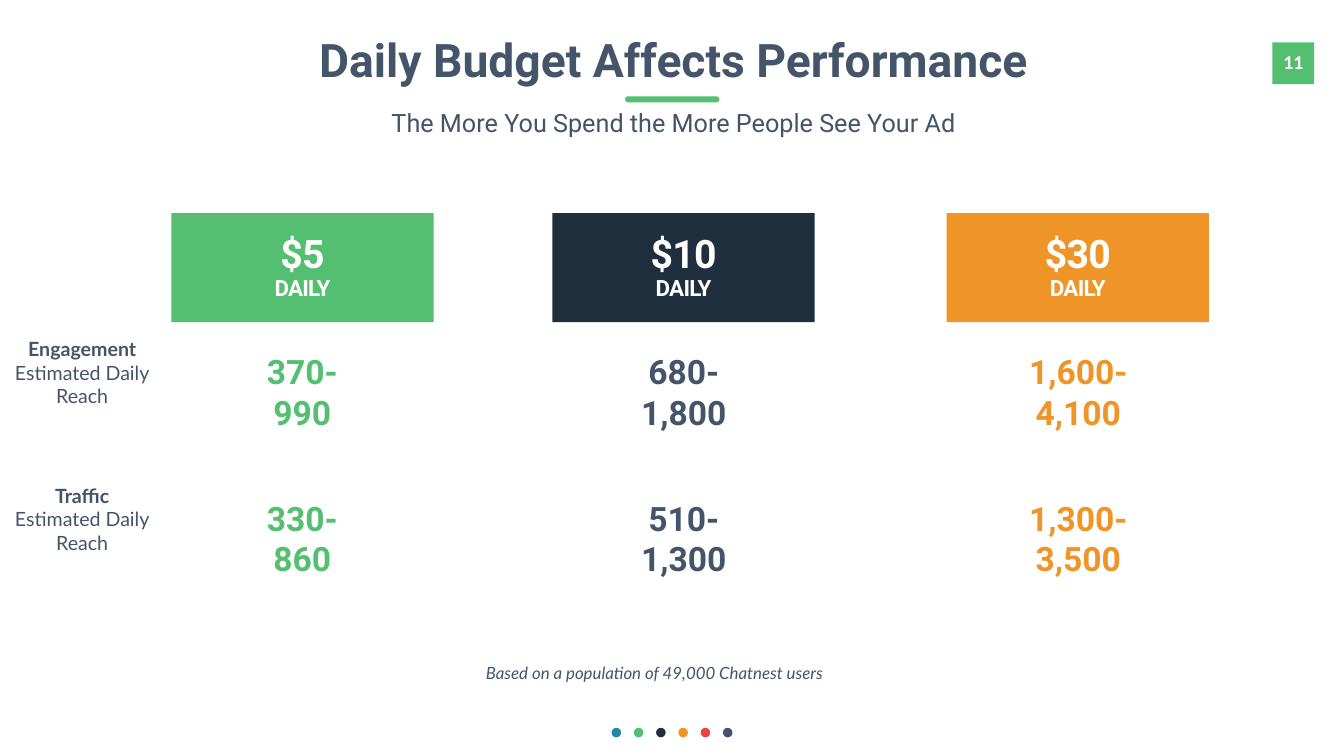
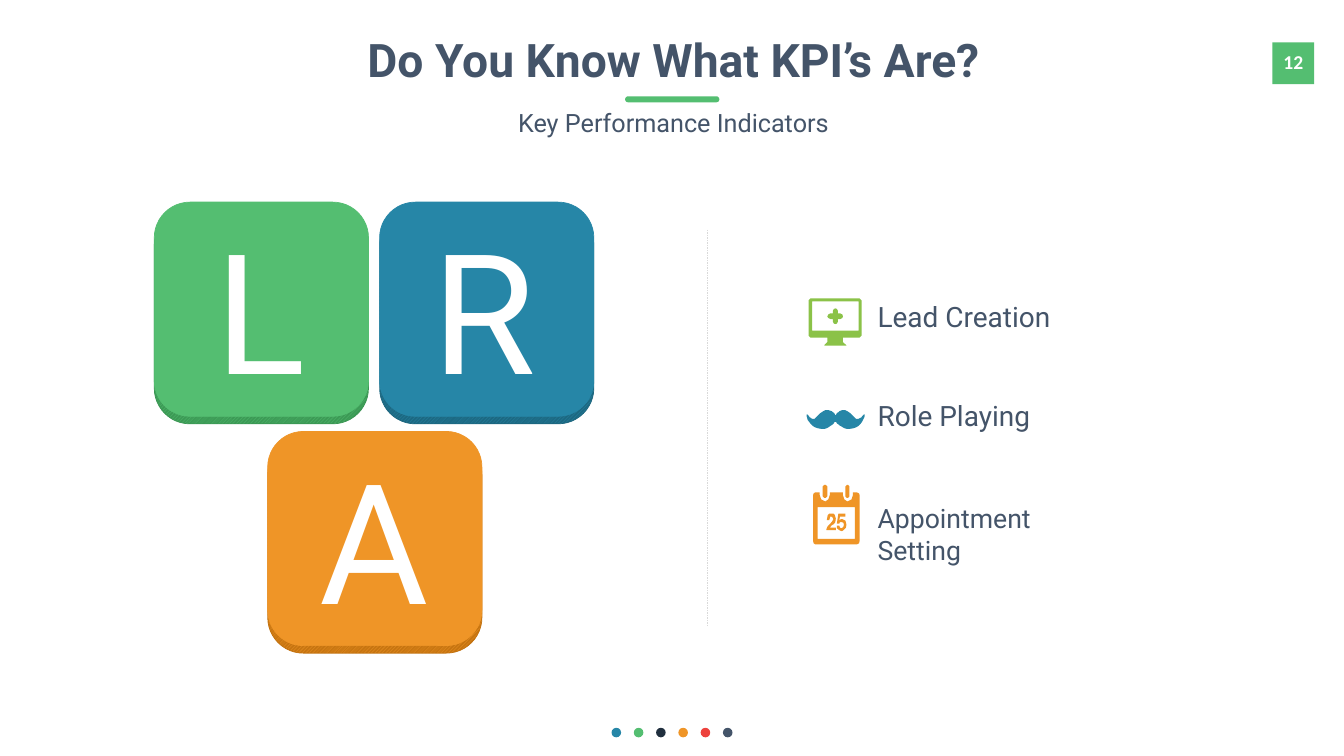
import pptx
import pptx.util
import pptx.dml.color
import pptx.enum.dml
import pptx.enum.shapes
import pptx.enum.text
import pptx.oxml.ns
import lxml.etree

# Shared style: 100 px to the inch
EMU_PER_PX = 9144
SLIDE_SIZE = (2666, 1500)
CENTER = 1336
GREEN, BLUE, NAVY, ORANGE = "54BE71", "2686A7", "202F3E", "EF9527"
RED, SLATE, WHITE, GRAY, LIME = "ED423D", "445469", "FFFFFF", "D9D9D9", "8BC248"
DOT_COLORS = [BLUE, GREEN, NAVY, ORANGE, RED, SLATE]
SHAPE = pptx.enum.shapes.MSO_SHAPE
ALIGN = pptx.enum.text.PP_ALIGN
ANCHOR = pptx.enum.text.MSO_ANCHOR

TITLE = dict(name="Roboto", size=66, bold=True, color=SLATE)
SUBTITLE = dict(name="Roboto", size=36, bold=False, color=SLATE)
PAGE = dict(name="Calibri", size=28, bold=True, color=WHITE)
PRICE = dict(name="Roboto", size=56, bold=True, color=WHITE, spacing=-110)
PERIOD = dict(PRICE, size=32)
VALUE = dict(name="Roboto", size=48, bold=True)
LABEL = dict(name="Lato", size=28, bold=False, color=SLATE)
NOTE = dict(name="Lato", size=24, italic=True, color=SLATE)
ITEM = dict(name="Roboto", color=SLATE)
LETTER = dict(name="Roboto", size=239, color=WHITE)

# Slide content
BUDGET = dict(page="11", title="Daily Budget Affects Performance", title_width=1514,
              subtitle="The More You Spend the More People See Your Ad",
              subtitle_width=1171)
# price, card left, card colour, value left, value width, value colour, values by row
PLANS = [
    ("$5", 340, GREEN, 466, 267, GREEN, ["370-990", "330-860"]),
    ("$10", 1096, NAVY, 1195, 323, SLATE, ["680-1,800", "510-1,300"]),
    ("$30", 1878, ORANGE, 1949, 380, ORANGE, ["1,600-4,100", "1,300-3,500"]),
]
GOALS = ["Engagement", "Traffic"]
FOOTNOTE = "Based on a population of 49,000 Chatnest users"

KPI = dict(page="12", title="Do You Know What KPI’s Are?", title_width=1352,
           subtitle="Key Performance Indicators", subtitle_width=643)
# letter, letter left and width, tile left and top, face and edge colours
TILES = [
    ("L", 417, 196, 306, 401, GREEN, "399552"),
    ("R", 830, 262, 753, 401, BLUE, "1C657D"),
    ("A", 619, 245, 531, 856, ORANGE, "C2710E"),
]
# text, top, width, size
ITEMS = [("Lead Creation", 590, 373, 40), ("Role Playing", 786, 335, 40),
         ("Appointment Setting", 991, 500, 38)]


def box_points(left, top, right, bottom, cut=0):
    """Corners of a rectangle, each cut off by the given length."""
    return [(left + cut, top), (right - cut, top), (right, top + cut),
            (right, bottom - cut), (right - cut, bottom), (left + cut, bottom),
            (left, bottom - cut), (left, top + cut)]


def curve_points(start, curves, steps=10):
    """Points along a chain of cubic curves."""
    points = [start]
    for x1, y1, x2, y2, x3, y3 in curves:
        x0, y0 = points[-1]
        for step in range(1, steps + 1):
            t = step / steps
            weights = ((1 - t) ** 3, 3 * t * (1 - t) ** 2, 3 * t * t * (1 - t), t ** 3)
            points.append(tuple(sum(w * v for w, v in zip(weights, values))
                                for values in ((x0, x1, x2, x3), (y0, y1, y2, y3))))
    return points


# Icon outlines, one list of points per contour
MONITOR = [
    box_points(1604, 592, 1709, 670, 4),
    box_points(1611, 598, 1703, 656),
    [(1641, 670), (1672, 670), (1672, 679), (1679, 685), (1679, 686),
     (1635, 686), (1635, 685), (1641, 679)],
    [(1647, 622), (1652, 622), (1652, 617), (1654, 613), (1657, 612), (1660, 613),
     (1662, 617), (1662, 622), (1667, 622), (1671, 624), (1672, 628), (1671, 631),
     (1667, 633), (1662, 633), (1662, 638), (1660, 642), (1657, 643), (1654, 642),
     (1652, 638), (1652, 633), (1647, 633), (1643, 631), (1641, 628), (1643, 624)],
]
MOUSTACHE = [curve_points((1715, 822), [
    (1712, 822, 1709, 831, 1701, 831), (1692, 831, 1688, 814, 1673, 814),
    (1662, 814, 1658, 824, 1657, 824), (1657, 824, 1653, 814, 1641, 814),
    (1626, 814, 1622, 831, 1613, 831), (1606, 831, 1602, 822, 1601, 822),
    (1598, 824, 1604, 851, 1630, 851), (1646, 851, 1656, 837, 1657, 837),
    (1658, 837, 1669, 851, 1685, 851), (1711, 851, 1716, 824, 1715, 822)])]
CALENDAR = [
    [(1617, 977), (1626, 977), (1626, 982), (1629, 991), (1637, 995), (1643, 991),
     (1646, 982), (1646, 977), (1672, 977), (1672, 982), (1675, 991), (1681, 995),
     (1689, 991), (1692, 982), (1692, 977), (1700, 977), (1704, 979), (1705, 982),
     (1705, 1074), (1704, 1078), (1700, 1080), (1617, 1080), (1614, 1078),
     (1613, 1074), (1613, 982), (1614, 979)],
    box_points(1622, 1006, 1696, 1069),
    [(1642, 1044), (1647, 1039), (1651, 1034), (1653, 1030), (1651, 1026), (1649, 1025),
     (1647, 1025), (1646, 1028), (1645, 1032), (1640, 1032), (1642, 1022), (1645, 1019),
     (1653, 1019), (1656, 1022), (1658, 1029), (1657, 1036), (1654, 1040), (1650, 1042),
     (1646, 1047), (1658, 1047), (1658, 1052), (1639, 1052), (1640, 1048)],
    [(1666, 1047), (1670, 1048), (1673, 1045), (1674, 1041), (1673, 1037), (1670, 1036),
     (1666, 1036), (1665, 1039), (1660, 1039), (1663, 1019), (1677, 1019), (1677, 1025),
     (1666, 1025), (1665, 1033), (1668, 1030), (1671, 1030), (1677, 1033), (1679, 1041),
     (1678, 1047), (1673, 1052), (1670, 1054), (1665, 1052), (1660, 1048), (1660, 1043),
     (1665, 1043)],
    box_points(1632, 962, 1641, 988, 3),
    box_points(1677, 962, 1685, 988, 3),
]
ICONS = [(MONITOR, LIME), (MOUSTACHE, BLUE), (CALENDAR, ORANGE)]


# Helpers
def px(*lengths):
    return [pptx.util.Emu(round(length * EMU_PER_PX)) for length in lengths]


def rgb(color):
    return pptx.dml.color.RGBColor.from_string(color)


def set_values(target, values):
    for name, value in values.items():
        setattr(target, name, value)


def set_font(run, style):
    values = dict(style)
    run.font.color.rgb = rgb(values.pop("color"))
    if "spacing" in values:
        run.font._element.set("spc", str(values.pop("spacing")))
    if "size" in values:
        values["size"] = pptx.util.Pt(values["size"])
    set_values(run.font, values)


def write(shape, lines, align=ALIGN.CENTER, anchor=ANCHOR.TOP, line_spacing=None,
          insets=(10, 5)):
    """Fill a shape with (text, style) lines, one paragraph each."""
    side, end = px(*insets)
    frame = shape.text_frame
    set_values(frame, dict(
        word_wrap=True, auto_size=pptx.enum.text.MSO_AUTO_SIZE.NONE, vertical_anchor=anchor,
        margin_left=side, margin_right=side, margin_top=end, margin_bottom=end))
    for index, (text, style) in enumerate(lines):
        paragraph = frame.add_paragraph() if index else frame.paragraphs[0]
        set_values(paragraph, dict(alignment=align, line_spacing=line_spacing,
                                   space_before=pptx.util.Pt(0)))
        run = paragraph.add_run()
        run.text = text
        set_font(run, style)


def add_text(slide, box, lines, **options):
    write(slide.shapes.add_textbox(*px(*box)), lines, **options)


def paint(shape, color, line=None):
    shape.shadow.inherit = False
    shape.fill.solid()
    shape.fill.fore_color.rgb = rgb(color)
    if line:
        shape.line.color.rgb = rgb(line)
        shape.line.width = pptx.util.Pt(1)
    else:
        shape.line.fill.background()


def add_block(shapes, kind, box, color, line=None):
    shape = shapes.add_shape(kind, *px(*box))
    paint(shape, color, line)
    return shape


def add_tile(slide, left, top, face, edge, size=425):
    shapes = slide.shapes.add_group_shape().shapes
    side = add_block(shapes, SHAPE.ROUNDED_RECTANGLE, (left, top + 15, size, size), edge, edge)
    side.fill.patterned()
    side.fill.pattern = pptx.enum.dml.MSO_PATTERN.DARK_UPWARD_DIAGONAL
    side.fill.fore_color.rgb, side.fill.back_color.rgb = rgb(face), rgb(edge)
    add_block(shapes, SHAPE.ROUNDED_RECTANGLE, (left, top, size, size), face, face)


def add_icon(slide, contours, color):
    builder = slide.shapes.build_freeform(*contours[0][0], scale=EMU_PER_PX)
    for index, points in enumerate(contours):
        if index:
            builder.move_to(*points[0])
        builder.add_line_segments(points[1:], close=True)
    paint(builder.convert_to_shape(), color)


def add_divider(slide, x, top, bottom):
    line = slide.shapes.add_connector(pptx.enum.shapes.MSO_CONNECTOR.STRAIGHT,
                                      *px(x, top, x, bottom))
    line.line.color.rgb = rgb(GRAY)
    set_values(line.line, dict(width=pptx.util.Pt(0.5),
                               dash_style=pptx.enum.dml.MSO_LINE.DASH))
    lxml.etree.SubElement(line._element.spPr, pptx.oxml.ns.qn("a:effectLst"))


def start_slide(presentation, content):
    """Add a slide with page number, dots, title, bar and subtitle."""
    slide = presentation.slides.add_slide(presentation.slide_layouts[0])
    add_block(slide.shapes, SHAPE.RECTANGLE, (2524, 84, 83, 83), GREEN)
    add_text(slide, (2522, 90, 87, 67), [(content["page"], PAGE)], insets=(20, 10))
    dots = slide.shapes.add_group_shape().shapes
    for index, color in enumerate(DOT_COLORS):
        add_block(dots, SHAPE.OVAL, (1213 + 44.2 * index, 1444, 19, 19), color)
    headings = [(slide.shapes.title, "title", 70, 112, TITLE),
                (slide.placeholders[1], "subtitle", 214, 66, SUBTITLE)]
    for placeholder, key, top, height, style in headings:
        width = content[key + "_width"]
        box = px(CENTER - width / 2, top, width, height)
        set_values(placeholder, dict(zip(("left", "top", "width", "height"), box)))
        write(placeholder, [(content[key], style)], line_spacing=0.9)
    bar = add_block(slide.shapes, SHAPE.ROUNDED_RECTANGLE, (1240, 191, 187, 12), GREEN)
    bar.adjustments[0] = 0.5
    return slide


def build_budget(presentation):
    slide = start_slide(presentation, BUDGET)
    row_tops = [692 + 291 * row for row in range(len(GOALS))]
    for price, left, color, value_left, value_width, value_color, values in PLANS:
        card = add_block(slide.shapes, SHAPE.RECTANGLE, (left, 423, 520, 216), color)
        write(card, [(price, PRICE), ("DAILY", PERIOD)], anchor=ANCHOR.MIDDLE,
              line_spacing=0.9, insets=(0, 0))
        for top, value in zip(row_tops, values):
            add_text(slide, (value_left, top, value_width, 91),
                     [(value, dict(VALUE, color=value_color))])
    for top, goal in zip(row_tops, GOALS):
        add_text(slide, (7, top - 28, 312, 151),
                 [(goal, dict(LABEL, bold=True)), ("Estimated Daily", LABEL),
                  ("Reach", LABEL)])
    add_text(slide, (954, 1310, 762, 50), [(FOOTNOTE, NOTE)], align=ALIGN.LEFT)


def build_kpi(presentation):
    slide = start_slide(presentation, KPI)
    for letter, letter_left, letter_width, left, top, face, edge in TILES:
        add_tile(slide, left, top, face, edge)
        add_text(slide, (letter_left, top + 6, letter_width, 412), [(letter, LETTER)])
    add_divider(slide, 1402, 456, 1241)
    for text, top, width, size in ITEMS:
        add_text(slide, (1731, top, width, 2 * size - 3), [(text, dict(ITEM, size=size))],
                 align=ALIGN.LEFT)
    for contours, color in ICONS:
        add_icon(slide, contours, color)


def main():
    presentation = pptx.Presentation()
    presentation.slide_width, presentation.slide_height = px(*SLIDE_SIZE)
    build_budget(presentation)
    build_kpi(presentation)
    presentation.save("out.pptx")


if __name__ == "__main__":
    main()
